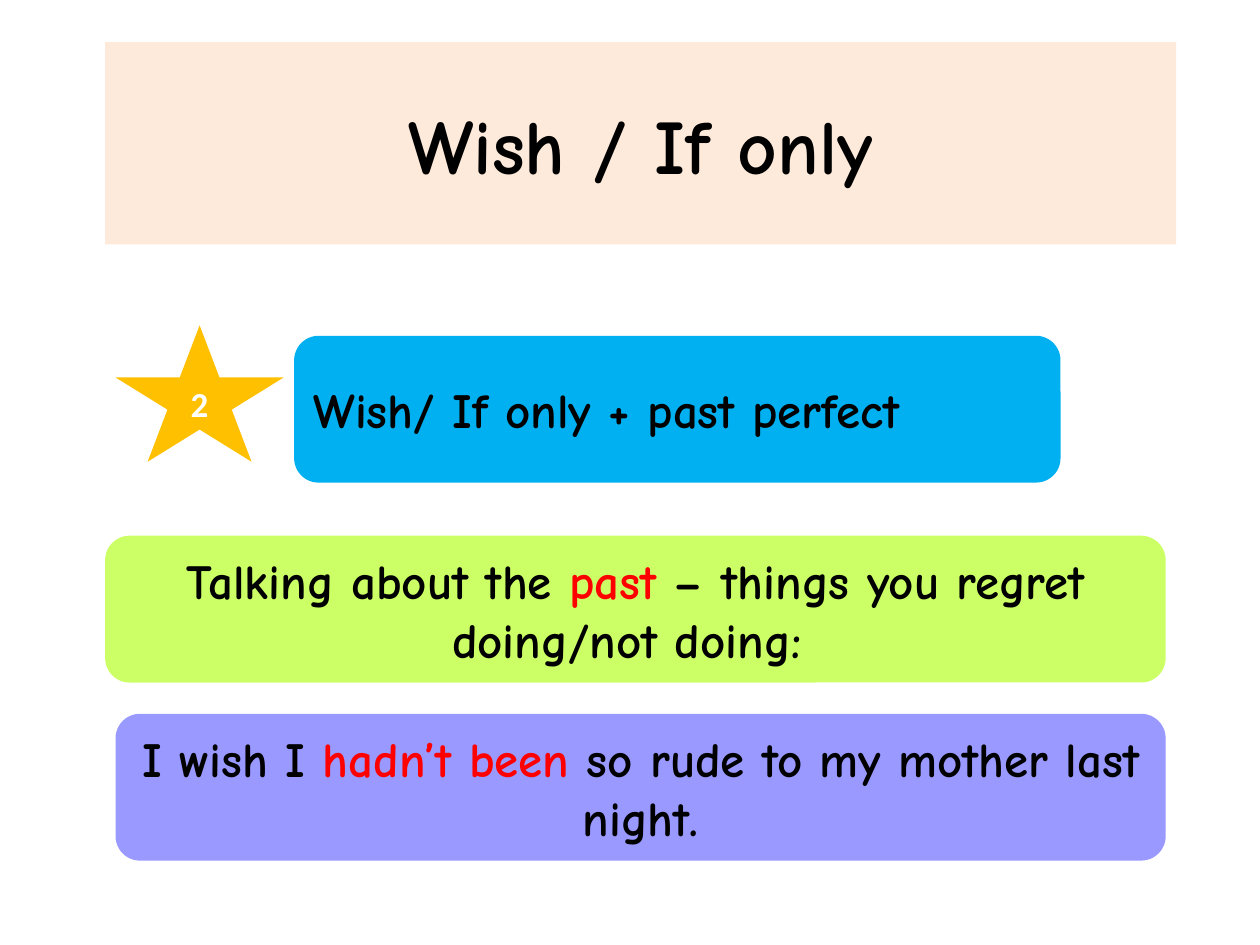
"""Build a grammar slide on wish / if only with the past perfect."""
from pptx import Presentation
from pptx.dml.color import RGBColor
from pptx.enum.shapes import MSO_SHAPE
from pptx.enum.text import MSO_ANCHOR, PP_ALIGN
from pptx.util import Cm, Pt

COLORS = {
    "black": "000000", "white": "FFFFFF", "red": "FF0000", "peach": "FDEADA",
    "blue": "00B0F0", "gold": "FFC000", "lime": "CCFF66", "violet": "9999FF",
}


def write_text(shape, spans, font="Comic Neue", size=28, align=PP_ALIGN.CENTER):
    frame = shape.text_frame
    frame.word_wrap = True
    frame.vertical_anchor = MSO_ANCHOR.MIDDLE
    para = frame.paragraphs[0]
    para.alignment = align
    for text, color in spans:
        span = para.add_run()
        span.text = text
        span.font.name = font
        span.font.size = Pt(size)
        span.font.bold = True
        span.font.color.rgb = RGBColor.from_string(COLORS[color])


deck = Presentation()
deck.slide_width, deck.slide_height = Cm(25.4), Cm(19.05)
page = deck.slides.add_slide(deck.slide_layouts[6])

boxes = [
    (MSO_SHAPE.ROUNDED_RECTANGLE, "blue", (5.93, 6.77, 15.45, 2.96),
     [("Wish/ If only + past perfect", "black")], {"align": PP_ALIGN.LEFT}),
    (MSO_SHAPE.STAR_5_POINT, "gold", (2.33, 6.56, 3.39, 2.75),
     [("2", "white")], {"font": "Calibri", "size": 20}),
    (MSO_SHAPE.ROUNDED_RECTANGLE, "lime", (2.12, 10.8, 21.38, 2.96),
     [("Talking about the ", "black"), ("past ", "red"),
      ("– things you regret doing/not doing: ", "black")], {}),
    (MSO_SHAPE.ROUNDED_RECTANGLE, "violet", (2.33, 14.39, 21.17, 2.96),
     [("I wish I ", "black"), ("hadn’t been ", "red"),
      ("so rude to my mother last night.", "black")], {}),
    (MSO_SHAPE.RECTANGLE, "peach", (2.12, 0.85, 21.59, 4.08),
     [("Wish / If only", "black")], {"size": 44}),
]

for kind, fill, place, spans, style in boxes:
    box = page.shapes.add_shape(kind, *[Cm(length) for length in place])
    box.shadow.inherit = False
    box.fill.solid()
    box.fill.fore_color.rgb = RGBColor.from_string(COLORS[fill])
    box.line.fill.background()
    write_text(box, spans, **style)

deck.save("out.pptx")
